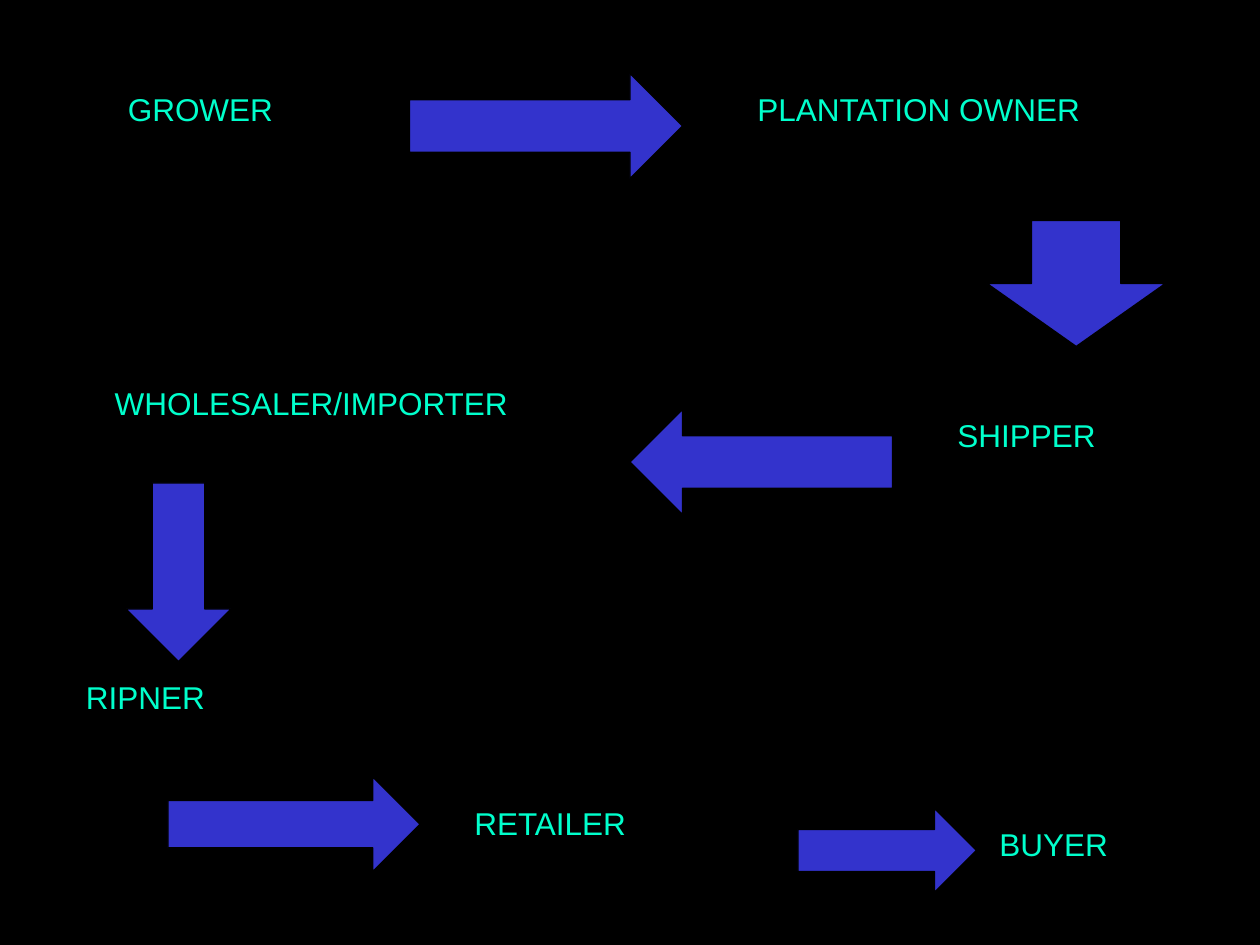
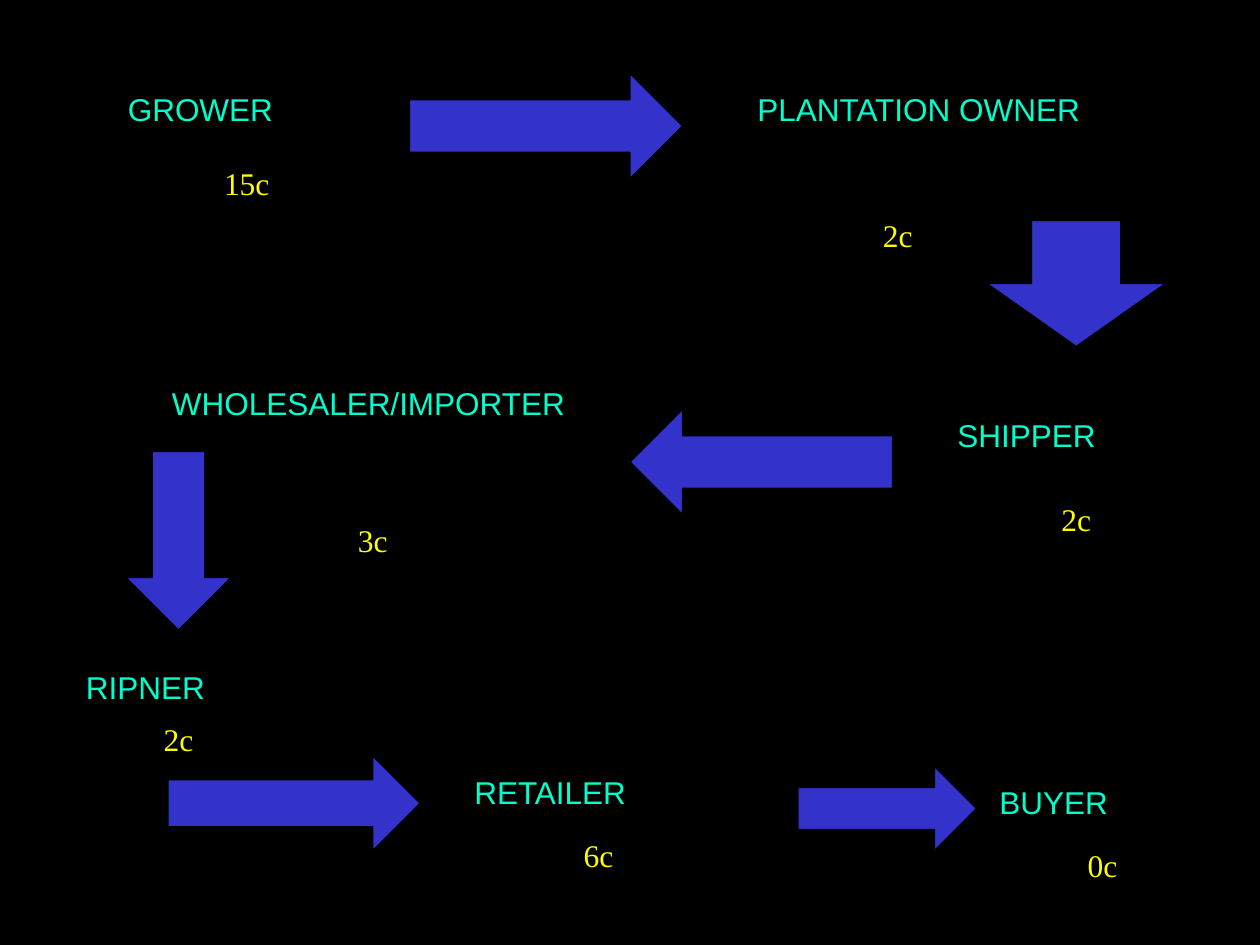
from dataclasses import dataclass, replace

import pptx
import pptx.dml.color
import pptx.enum.shapes
import pptx.enum.text
import pptx.presentation
import pptx.slide
import pptx.util

COLS, ROWS = 120, 90
SLIDE_W, SLIDE_H = pptx.util.Inches(10), pptx.util.Inches(7.5)
COLORS = {"back": "000000", "arrow": "3333CC", "stage": "00FFCC", "price": "FFFF00"}
FONTS = {"stage": "Arial", "price": "Times New Roman"}
LEFT = pptx.enum.text.PP_ALIGN.LEFT
CENTER = pptx.enum.text.PP_ALIGN.CENTER
ARROW = pptx.enum.shapes.MSO_SHAPE


@dataclass(frozen=True)
class Box:
    """A place on the grid, in columns and rows."""
    col: float
    row: float
    cols: float
    rows: float = 6

    def emu(self) -> tuple[int, int, int, int]:
        cell_w, cell_h = SLIDE_W / COLS, SLIDE_H / ROWS
        return (round(self.col * cell_w), round(self.row * cell_h),
                round(self.cols * cell_w), round(self.rows * cell_h))


@dataclass(frozen=True)
class Label:
    text: str
    box: Box
    align: pptx.enum.text.PP_ALIGN = LEFT
    style: str = "stage"


@dataclass(frozen=True)
class Arrow:
    kind: pptx.enum.shapes.MSO_SHAPE
    box: Box


STAGES = {
    "grower": Label("GROWER", Box(11, 8, 25.4)),
    "owner": Label("PLANTATION OWNER", Box(65, 8, 45, 10.8), CENTER),
    "shipper": Label("SHIPPER", Box(90, 39, 23.8)),
    "importer": Label("WHOLESALER/IMPORTER", Box(3.2, 36, 52.9), CENTER),
    "ripener": Label("RIPNER", Box(7, 64, 20.3)),
    "retailer": Label("RETAILER", Box(44, 76, 28.4)),
    "buyer": Label("BUYER", Box(94, 78, 20.9)),
}
ARROWS = {
    "to owner": Arrow(ARROW.RIGHT_ARROW, Box(39, 7, 26, 10)),
    "to shipper": Arrow(ARROW.DOWN_ARROW, Box(94, 21, 17, 12)),
    "to importer": Arrow(ARROW.LEFT_ARROW, Box(60, 39, 25, 10)),
    "to ripener": Arrow(ARROW.DOWN_ARROW, Box(12, 46, 10, 17)),
    "to retailer": Arrow(ARROW.RIGHT_ARROW, Box(16, 74, 24, 9)),
    "to buyer": Arrow(ARROW.RIGHT_ARROW, Box(76, 77, 17, 8)),
}
# On the price slide the lower stages move up to make room.
PRICED_BOXES = {
    "grower": {"rows": 10.8},
    "importer": {"col": 14, "cols": 42.2, "rows": 10.8},
    "ripener": {"row": 63},
    "retailer": {"row": 73},
    "buyer": {"row": 74},
    "to ripener": {"row": 43},
    "to retailer": {"row": 72},
    "to buyer": {"row": 73},
}
PRICES = [Label(text, box, CENTER, "price") for text, box in (
    ("15c", Box(16, 15, 15)),
    ("2c", Box(77, 20, 17)),
    ("2c", Box(95, 47, 15)),
    ("3c", Box(26, 49, 19)),
    ("2c", Box(11, 68, 12)),
    ("6c", Box(47, 79, 20)),
    ("0c", Box(98, 80, 14)),
)]


def rgb(name: str) -> pptx.dml.color.RGBColor:
    return pptx.dml.color.RGBColor.from_string(COLORS[name])


def draw_label(s: pptx.slide.Slide, label: Label) -> None:
    tf = s.shapes.add_textbox(*label.box.emu()).text_frame
    tf.word_wrap = True
    p = tf.paragraphs[0]
    p.alignment = label.align
    r = p.add_run()
    r.text = label.text
    r.font.name = FONTS[label.style]
    r.font.size = pptx.util.Pt(18)
    r.font.color.rgb = rgb(label.style)


def draw_arrow(s: pptx.slide.Slide, arrow: Arrow) -> None:
    sp = s.shapes.add_shape(arrow.kind, *arrow.box.emu())
    sp.shadow.inherit = False
    sp.fill.solid()
    sp.fill.fore_color.rgb = rgb("arrow")
    sp.line.color.rgb = rgb("back")
    sp.line.width = pptx.util.Pt(0.75)


def add_chain_slide(prs: pptx.presentation.Presentation,
                    changes: dict[str, dict[str, float]],
                    prices: list[Label]) -> None:
    """Add the supply chain, with changed boxes and a price per stage."""
    s = prs.slides.add_slide(prs.slide_layouts[6])
    for items, draw in ((STAGES, draw_label), (ARROWS, draw_arrow)):
        for name, item in items.items():
            box = replace(item.box, **changes.get(name, {}))
            draw(s, replace(item, box=box))
    for price in prices:
        draw_label(s, price)


def main() -> None:
    prs = pptx.Presentation()
    prs.slide_width, prs.slide_height = SLIDE_W, SLIDE_H
    back = prs.slide_master.background.fill
    back.solid()
    back.fore_color.rgb = rgb("back")
    add_chain_slide(prs, {}, [])
    add_chain_slide(prs, PRICED_BOXES, PRICES)
    prs.save("out.pptx")


if __name__ == "__main__":
    main()
